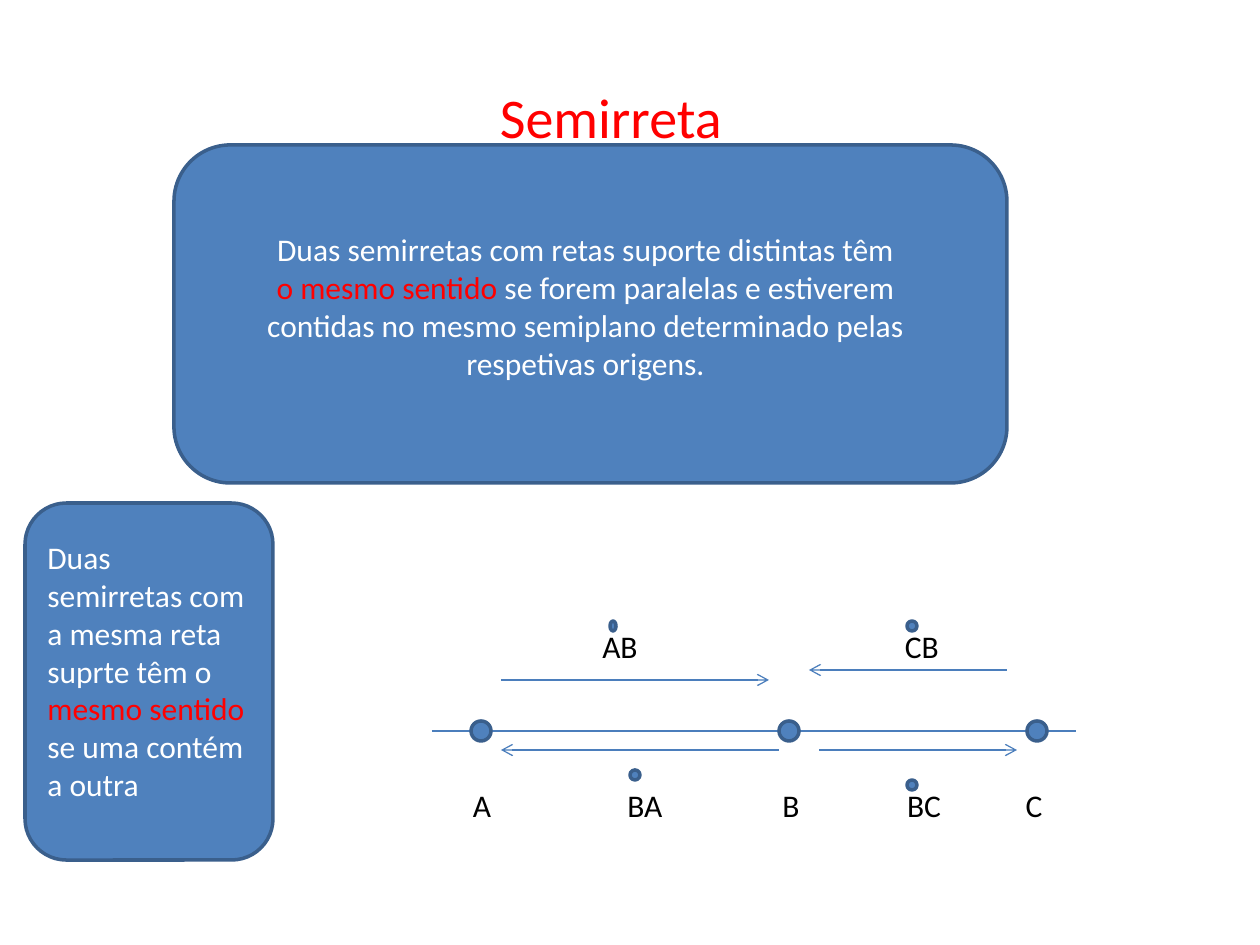
from lxml.etree import SubElement
from pptx import Presentation
from pptx.dml.color import RGBColor
from pptx.enum.shapes import MSO_CONNECTOR, MSO_SHAPE
from pptx.enum.text import PP_ALIGN
from pptx.oxml.ns import qn
from pptx.util import Emu, Pt

WIDE, HIGH = 1260, 945
FILL, EDGE, LINE = "4F81BD", "3A5F8C", "4B7EBC"
RED, WHITE, BLACK = "FF0000", "FFFFFF", "000000"
AXIS = 731


def px(size):
    return Emu(round(size * 914400 / 126))


def tint(code):
    return RGBColor.from_string(code)


def add_form(slide, kind, left, top, wide, high):
    form = slide.shapes.add_shape(kind, px(left), px(top), px(wide), px(high))
    form.shadow.inherit = False
    form.fill.solid()
    form.fill.fore_color.rgb = tint(FILL)
    form.line.color.rgb = tint(EDGE)
    form.line.width = Pt(2)


def add_dot(slide, left, top, wide, high):
    add_form(slide, MSO_SHAPE.OVAL, left, top, wide, high)


def add_panel(slide, left, top, wide, high):
    add_form(slide, MSO_SHAPE.ROUNDED_RECTANGLE, left, top, wide, high)


def add_text(slide, left, top, wide, high, runs, size=18, align=PP_ALIGN.CENTER):
    box = slide.shapes.add_textbox(px(left), px(top), px(wide), px(high))
    frame = box.text_frame
    frame.word_wrap = True
    para = frame.paragraphs[0]
    para.alignment = align
    for words, code in runs:
        run = para.add_run()
        run.text = words
        run.font.name = "Calibri"
        run.font.size = Pt(size)
        run.font.color.rgb = tint(code)


def add_label(slide, mid, top, words):
    wide = 100
    add_text(slide, mid - wide / 2, top, wide, 50, [(words, BLACK)])


def add_line(slide, start, end, top, arrow=False):
    line = slide.shapes.add_connector(
        MSO_CONNECTOR.STRAIGHT, px(start), px(top), px(end), px(top))
    line.line.color.rgb = tint(LINE)
    line.line.width = Pt(0.75)
    if arrow:
        SubElement(line.line._get_or_add_ln(), qn("a:tailEnd"), type="arrow")
    SubElement(line._element.spPr, qn("a:effectLst"))


def main():
    deck = Presentation()
    deck.slide_width, deck.slide_height = px(WIDE), px(HIGH)
    slide = deck.slides.add_slide(deck.slide_layouts[6])

    add_text(slide, 44, 76, 1134, 624, [("Semirreta", RED)], size=32)

    for start, end in [(432, 799), (799, 1076)]:
        add_line(slide, start, end, AXIS)
    for left in (471, 779, 1027):
        add_dot(slide, left, AXIS - 10, 20, 20)

    for start, end, top in [(779, 501, 750), (501, 769, 680),
                            (819, 1017, 750), (1007, 809, 670)]:
        add_line(slide, start, end, top, arrow=True)

    for mid, words in [(620, "AB"), (922, "CB")]:
        add_label(slide, mid, 621, words)
    for mid, words in [(482, "A"), (645, "BA"), (791, "B"),
                       (924, "BC"), (1034, "C")]:
        add_label(slide, mid, 780, words)

    for left, top, wide in [(630, 770, 10), (907, 780, 10),
                            (610, 621, 6), (907, 621, 10)]:
        add_dot(slide, left, top, wide, 10)

    add_panel(slide, 25, 503, 248, 357)
    add_text(slide, 35, 532, 228, 280, [
        ("Duas semirretas com a mesma reta suprte têm o ", WHITE),
        ("mesmo sentido ", RED),
        ("se uma contém a outra", WHITE),
    ], align=PP_ALIGN.LEFT)

    add_panel(slide, 174, 145, 833, 338)
    add_text(slide, 253, 224, 665, 165, [
        ("Duas semirretas com retas suporte distintas têm ", WHITE),
        ("o mesmo sentido ", RED),
        ("se forem paralelas e estiverem contidas no mesmo semiplano "
         "determinado pelas respetivas origens.", WHITE),
    ])

    deck.save("out.pptx")


if __name__ == "__main__":
    main()
